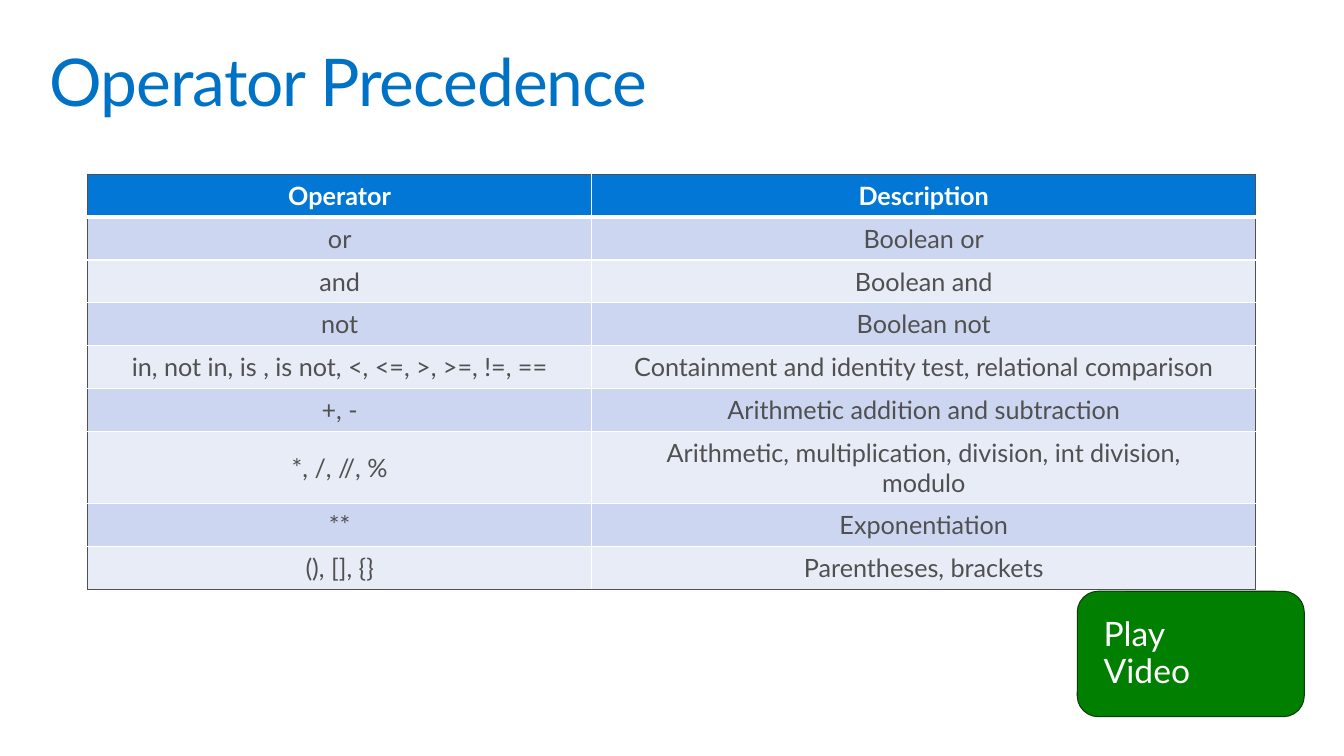
"""Build the Operator Precedence slide."""
from lxml.etree import SubElement
from pptx import Presentation
from pptx.dml.color import RGBColor
from pptx.enum.shapes import MSO_SHAPE as Shape
from pptx.enum.text import MSO_ANCHOR as Anchor, MSO_AUTO_SIZE as AutoSize, PP_ALIGN as Align
from pptx.oxml.ns import qn
from pptx.util import Cm, Pt

TITLE = "Operator Precedence"
BUTTON = "Play\vVideo"
ROWS = [
    ("Operator", "Description"),
    ("or", "Boolean or"),
    ("and", "Boolean and"),
    ("not", "Boolean not"),
    ("in, not in, is , is not, <, <=, >, >=, !=, ==",
     "Containment and identity test, relational comparison"),
    ("+, -", "Arithmetic addition and subtraction"),
    ("*, /, //, %", "Arithmetic, multiplication, division, int division, modulo"),
    ("**", "Exponentiation"),
    ("(), [], {}", "Parentheses, brackets"),
]
COLUMN_WIDTHS = (12.7, 16.74)
ROW_HEIGHT = 1.08
FONT = "Lato"
WHITE, GREY = "FFFFFF", "505050"
HEADER_FILL, BAND_FILLS = "0377D6", ("E7ECF7", "CCD6F0")


def color(value):
    return RGBColor.from_string(value)


def set_font(para, size, value, bold=False):
    font = para.font
    font.name, font.size, font.bold = FONT, Pt(size), bold
    font.color.rgb = color(value)


def set_margins(target, across, down):
    target.margin_left = target.margin_right = Cm(across)
    target.margin_top = target.margin_bottom = Cm(down)


def add_border(cell, side, value, width):
    line = SubElement(cell._tc.get_or_add_tcPr(), qn(f"a:ln{side}"), w=str(Pt(width)))
    SubElement(SubElement(line, qn("a:solidFill")), qn("a:srgbClr"), val=value)


def format_cell(cell, text, row, column):
    header, last = row == 0, row == len(ROWS) - 1
    add_border(cell, "L", GREY if column == 0 else WHITE, 1)
    add_border(cell, "R", GREY if column == 1 else WHITE, 1)
    add_border(cell, "T", GREY if header else WHITE, 3 if row == 1 else 1)
    add_border(cell, "B", GREY if last else WHITE, 3 if header else 1)
    cell.fill.solid()
    cell.fill.fore_color.rgb = color(HEADER_FILL if header else BAND_FILLS[row % 2])
    cell.vertical_anchor = Anchor.MIDDLE
    set_margins(cell, 0.76, 0.15)
    cell.text = text
    para = cell.text_frame.paragraphs[0]
    para.alignment = Align.CENTER
    set_font(para, 18, WHITE if header else GREY, header)


def add_title(page):
    title = page.shapes.title
    title.left, title.top, title.width, title.height = Cm(1), Cm(1), Cm(31.88), Cm(2.49)
    frame = title.text_frame
    frame.text = TITLE
    frame.auto_size = AutoSize.NONE
    frame.vertical_anchor = Anchor.TOP
    set_margins(frame, 0.25, 0.25)
    para = frame.paragraphs[0]
    para.alignment, para.line_spacing = Align.LEFT, 0.9
    set_font(para, 47, "0072C6")
    para.runs[0].font._element.set("spc", "-70")


def add_operator_table(page):
    table = page.shapes.add_table(
        len(ROWS), len(COLUMN_WIDTHS), Cm(2.21), Cm(4.39),
        Cm(sum(COLUMN_WIDTHS)), Cm(ROW_HEIGHT * len(ROWS))).table
    for column, width in zip(table.columns, COLUMN_WIDTHS):
        column.width = Cm(width)
    for row, texts in enumerate(ROWS):
        table.rows[row].height = Cm(ROW_HEIGHT)
        for column, text in enumerate(texts):
            format_cell(table.cell(row, column), text, row, column)


def add_button(page):
    button = page.shapes.add_shape(
        Shape.ROUNDED_RECTANGLE, Cm(27.15), Cm(14.9), Cm(5.72), Cm(3.16))
    button.shadow.inherit = False
    button.fill.solid()
    button.fill.fore_color.rgb = color("007F00")
    button.line.color.rgb = color("083E08")
    button.line.width = Pt(0.75)
    frame = button.text_frame
    frame.text = BUTTON
    frame.word_wrap = True
    frame.vertical_anchor = Anchor.MIDDLE
    set_margins(frame, 0.51, 0.41)
    para = frame.paragraphs[0]
    para.alignment, para.line_spacing = Align.LEFT, 0.9
    set_font(para, 24, WHITE)


def main():
    deck = Presentation()
    deck.slide_width, deck.slide_height = Cm(33.87), Cm(19.05)
    page = deck.slides.add_slide(deck.slide_layouts[5])
    add_title(page)
    add_button(page)
    add_operator_table(page)
    deck.save("out.pptx")


if __name__ == "__main__":
    main()
